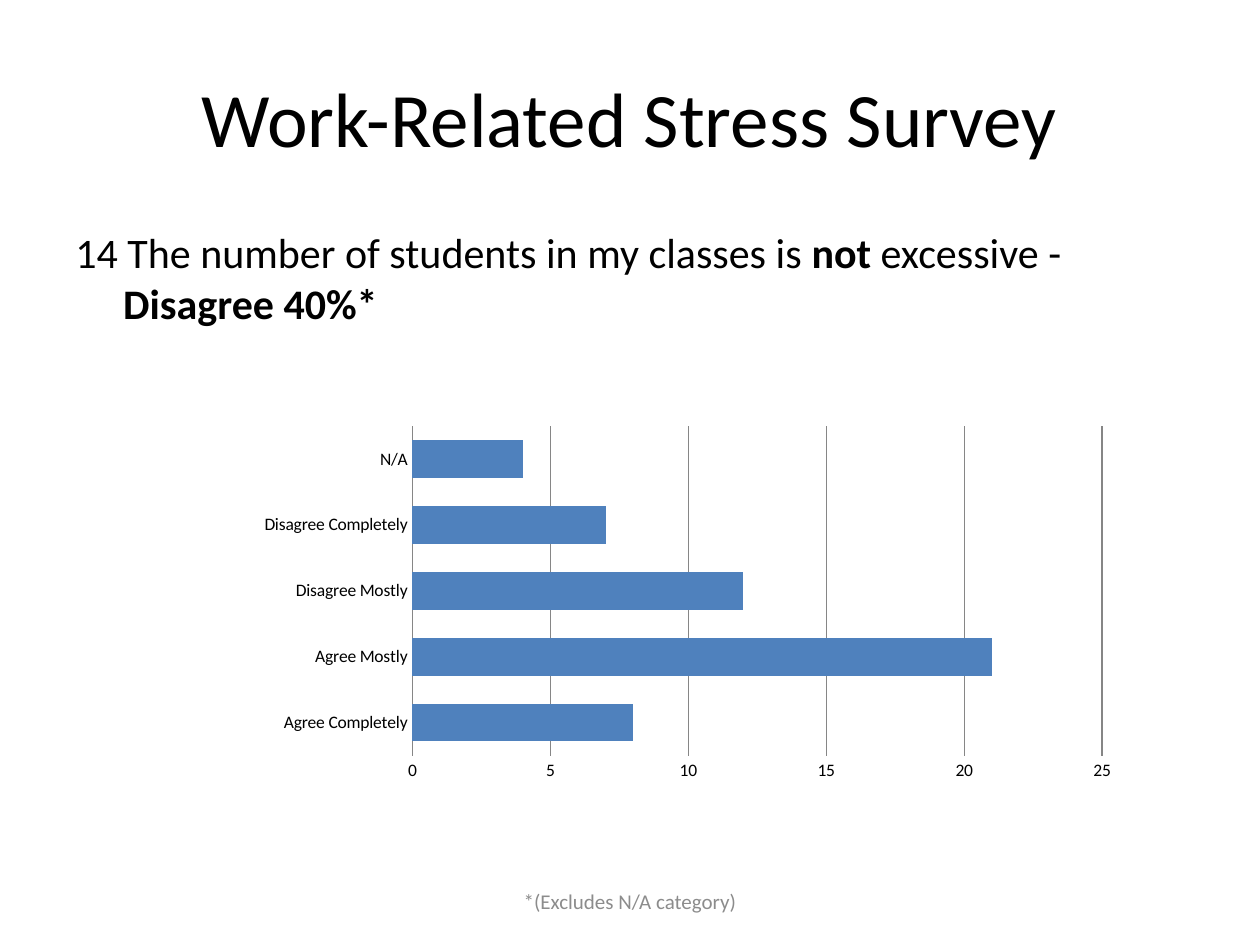
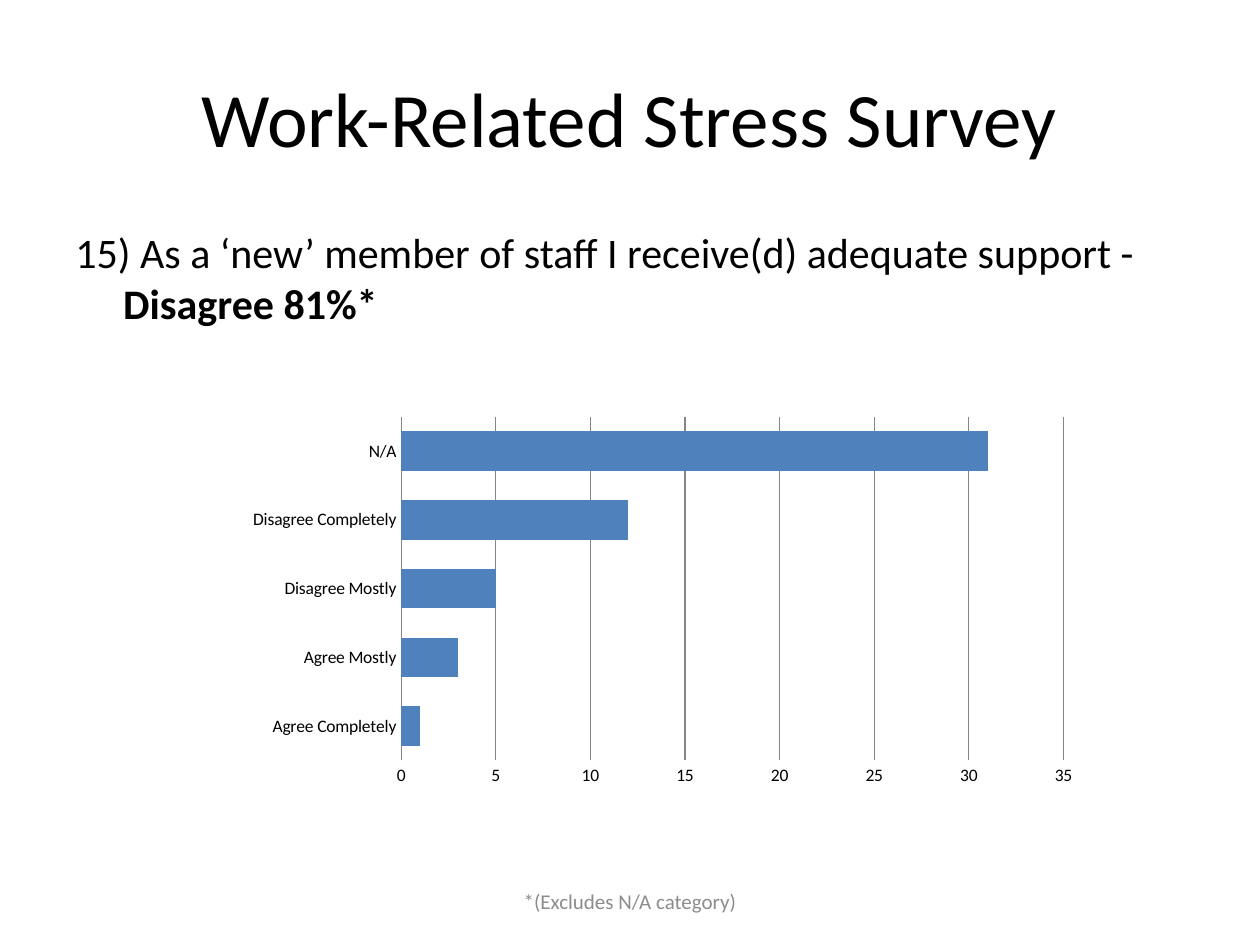
from pptx import Presentation
from pptx.chart.data import CategoryChartData
from pptx.dml.color import RGBColor
from pptx.enum.chart import XL_CHART_TYPE, XL_TICK_MARK
from pptx.enum.text import MSO_ANCHOR, PP_ALIGN
from pptx.oxml import parse_xml
from pptx.oxml.ns import nsdecls
from pptx.util import Inches, Pt

BAR_CLUSTERED = XL_CHART_TYPE.BAR_CLUSTERED
NO_TICKS = XL_TICK_MARK.NONE
TOP, MIDDLE = MSO_ANCHOR.TOP, MSO_ANCHOR.MIDDLE
LEFT, CENTER = PP_ALIGN.LEFT, PP_ALIGN.CENTER

BLACK = RGBColor(0x00, 0x00, 0x00)
FOOTNOTE_GREY = RGBColor(0x8C, 0x8C, 0x8C)
GRID_GREY = RGBColor(0x86, 0x86, 0x86)
BAR_BLUE = RGBColor(0x4F, 0x81, 0xBD)
FONT = "Calibri"

WIDTH, HEIGHT = Inches(10), Inches(7.5)
MARGIN = WIDTH * 0.05
CONTENT_WIDTH = WIDTH - 2 * MARGIN
HANGING_INDENT = Inches(0.38)
PLOT_AREA = {"x": 0.28, "y": 0.03, "w": 0.68, "h": 0.76}

ANSWERS = ["Agree Completely", "Agree Mostly", "Disagree Mostly",
           "Disagree Completely", "N/A"]

# Question runs are (text, bold); chart_box is left, top, width, height in inches.
QUESTIONS = [
    {"question": [("14 The number of students in my classes is ", False),
                  ("not", True), (" excessive - ", False),
                  ("Disagree 40%*", True)],
     "counts": [8, 21, 12, 7, 4], "axis_max": 25,
     "chart_box": (1.02, 3.28, 8.05, 3.44)},
    {"question": [("15) As a ‘new’ member of staff I receive(d) adequate support - ", False),
                  ("Disagree 81%*", True)],
     "counts": [1, 3, 5, 12, 31], "axis_max": 35,
     "chart_box": (1.02, 3.2, 7.73, 3.59)},
]


def write_text(shape, runs, box, size, color=BLACK, align=LEFT, anchor=TOP):
    """Place a shape and fill it with one paragraph of (text, bold) runs."""
    shape.left, shape.top, shape.width, shape.height = (int(v) for v in box)
    frame = shape.text_frame
    frame.word_wrap = True
    frame.vertical_anchor = anchor
    paragraph = frame.paragraphs[0]
    paragraph.alignment = align
    for text, bold in runs:
        run = paragraph.add_run()
        run.text = text
        run.font.name, run.font.size, run.font.bold = FONT, Pt(size), bold
        run.font.color.rgb = color
    return paragraph


def add_answer_chart(slide, counts, axis_max, chart_box):
    data = CategoryChartData()
    data.categories = ANSWERS
    data.add_series("Series 1", counts)
    box = [Inches(v) for v in chart_box]
    chart = slide.shapes.add_chart(BAR_CLUSTERED, *box, data).chart
    chart.has_legend = False
    chart.has_title = False
    chart.font.name, chart.font.size = FONT, Pt(10)
    chart.font.color.rgb = BLACK

    bars = chart.plots[0]
    bars.gap_width, bars.overlap = 75, -25
    bars.vary_by_categories = False
    fill = bars.series[0].format.fill
    fill.solid()
    fill.fore_color.rgb = BAR_BLUE

    answer_axis, count_axis = chart.category_axis, chart.value_axis
    for axis in (answer_axis, count_axis):
        axis.major_tick_mark = axis.minor_tick_mark = NO_TICKS
    count_axis.minimum_scale, count_axis.maximum_scale = 0, axis_max
    count_axis.major_unit = 5
    count_axis.has_major_gridlines = True
    count_axis.format.line.fill.background()
    for line in (answer_axis.format.line, count_axis.major_gridlines.format.line):
        line.color.rgb = GRID_GREY
        line.width = Pt(0.75)

    plot_area = chart.element.xpath("c:chart/c:plotArea")[0]
    for automatic_layout in plot_area.xpath("c:layout"):
        plot_area.remove(automatic_layout)
    modes = '<c:xMode val="edge"/><c:yMode val="edge"/>'
    sizes = "".join(f'<c:{side} val="{share}"/>' for side, share in PLOT_AREA.items())
    plot_area.insert(0, parse_xml(
        f'<c:layout {nsdecls("c")}><c:manualLayout><c:layoutTarget val="inner"/>'
        f'{modes}{sizes}</c:manualLayout></c:layout>'))


deck = Presentation()
deck.slide_width, deck.slide_height = WIDTH, HEIGHT
title_only = deck.slide_layouts[5]

for item in QUESTIONS:
    slide = deck.slides.add_slide(title_only)
    write_text(slide.shapes.title, [("Work-Related Stress Survey", False)],
               (MARGIN, HEIGHT * 0.04, CONTENT_WIDTH, Inches(1.25)),
               44, align=CENTER, anchor=MIDDLE)

    question = write_text(slide.shapes.add_textbox(0, 0, 0, 0), item["question"],
                          (MARGIN, Inches(1.75), CONTENT_WIDTH, HEIGHT * 0.66), 24)
    question.space_before = Pt(4.8)
    indents = question._p.get_or_add_pPr()
    indents.set("marL", str(HANGING_INDENT))
    indents.set("indent", str(-HANGING_INDENT))

    add_answer_chart(slide, item["counts"], item["axis_max"], item["chart_box"])

    footnote_width = Inches(3.17)
    write_text(slide.shapes.add_textbox(0, 0, 0, 0), [("*(Excludes N/A category)", False)],
               ((WIDTH - footnote_width) / 2, Inches(6.95), footnote_width, Inches(0.4)),
               12, color=FOOTNOTE_GREY, align=CENTER, anchor=MIDDLE)

deck.save("out.pptx")
